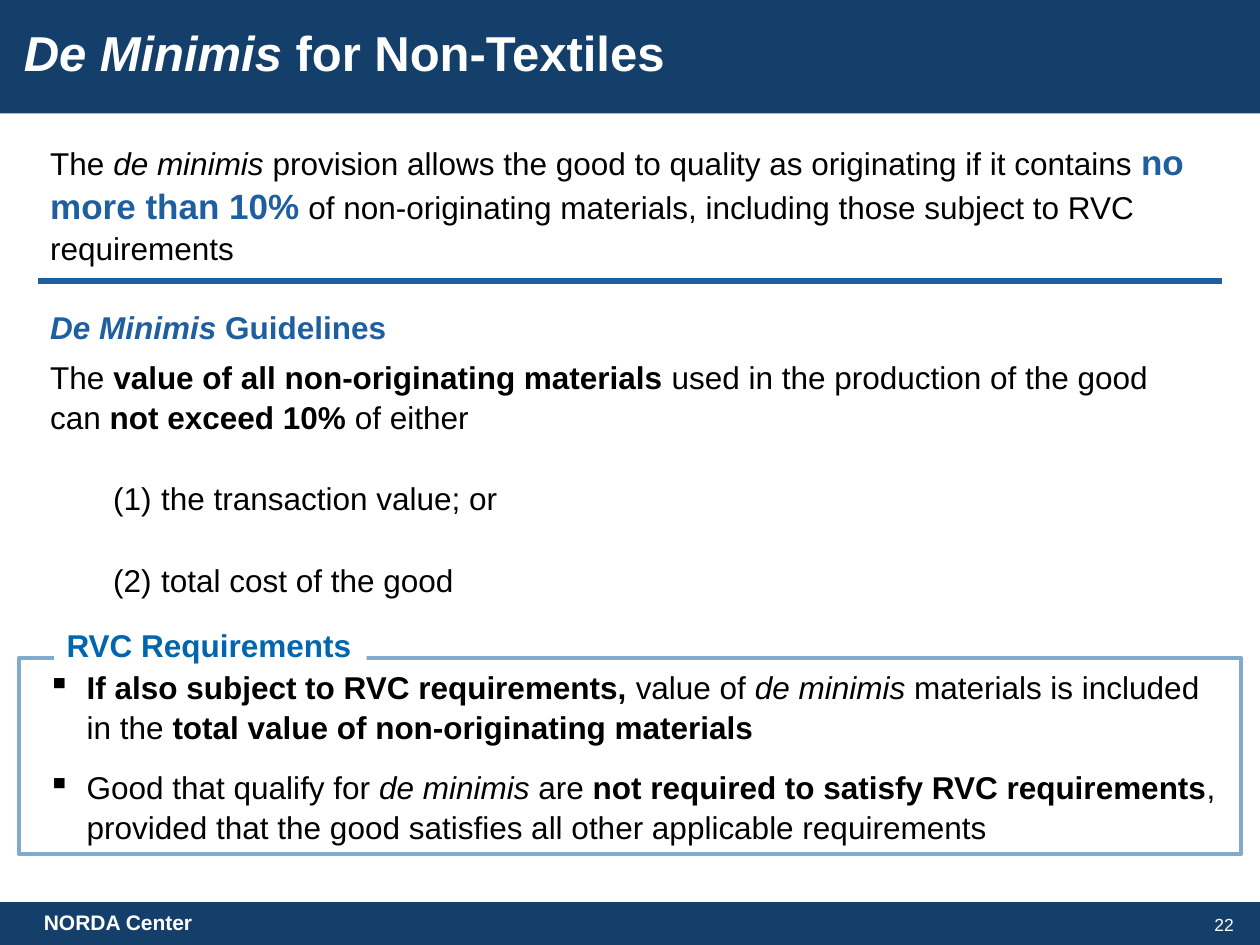
from lxml import etree
from pptx import Presentation
from pptx.dml.color import RGBColor
from pptx.enum import shapes, text
from pptx.oxml.ns import qn
from pptx.util import Inches, Pt

NAVY = RGBColor(0x14, 0x3F, 0x6A)
BLUE = RGBColor(0x1F, 0x5F, 0xA0)
LABEL_BLUE = RGBColor(0x01, 0x66, 0xAF)
FRAME_BLUE = RGBColor(0x7F, 0xAB, 0xCE)
WHITE = RGBColor(0xFF, 0xFF, 0xFF)
BLACK = RGBColor(0, 0, 0)

BOLD = {"bold": True}
ITALIC = {"italic": True}
BOLD_ITALIC = {"bold": True, "italic": True}
KEY = {"bold": True, "size": Pt(20), "color": BLUE}

# Each paragraph is (runs, paragraph format); each run is (words, font format).
TITLE = [([("De Minimis ", BOLD_ITALIC), ("for Non-Textiles", BOLD)], {"line_spacing": 0.9})]
INTRO = [([("The ", {}), ("de minimis ", ITALIC),
           ("provision allows the good to quality as originating if it contains ", {}),
           ("no more than 10%", KEY),
           (" of non-originating materials, including those subject to RVC requirements", {})],
          {"space_after": Pt(6)})]
NUMBERED = {"space_before": Pt(12), "space_after": Pt(12),
            "bullet": ("buAutoNum", {"type": "arabicParenBoth"}), "indent": (0.88, -0.38)}
GUIDELINES = [
    ([("De Minimis ", {**BOLD_ITALIC, "color": BLUE}), ("Guidelines", {**BOLD, "color": BLUE})],
     {"space_after": Pt(6)}),
    ([("The ", {}), ("value of all non-originating materials ", BOLD),
      ("used in the production of the good can ", {}), ("not exceed 10% ", BOLD),
      ("of either", {})], {"space_after": Pt(12)}),
    ([("the transaction value; or", {})], NUMBERED),
    ([("total cost of the good", {})], NUMBERED),
]
SQUARE = {"space_after": Pt(12), "bullet": ("buChar", {"char": "▪"}), "indent": (0.44, -0.31)}
RVC_RULES = [
    ([("If also subject to RVC requirements, ", BOLD), ("value of ", {}),
      ("de minimis ", ITALIC), ("materials is included in the ", {}),
      ("total value of non-originating materials", BOLD)], SQUARE),
    ([("Good that qualify for ", {}), ("de minimis ", ITALIC), ("are ", {}),
      ("not required to satisfy RVC requirements", BOLD),
      (", provided that the good satisfies all other applicable requirements", {})], SQUARE),
]
RVC_LABEL = [([("RVC Requirements", BOLD)], {"line_spacing": 1.0})]
FOOTER = [([("NORDA Center", BOLD)], {"line_spacing": 0.9, "indent": (0.25, 0)})]
PAGE_NUMBER = [([("22", {})], {"line_spacing": 1.0, "alignment": text.PP_ALIGN.RIGHT})]


def set_indent(para, left, first):
    properties = para._p.get_or_add_pPr()
    properties.set("marL", str(Inches(left)))
    properties.set("indent", str(Inches(first)))


def fill_text(box, paragraphs, size=18, color=BLACK, anchor=text.MSO_ANCHOR.TOP, wrap=True):
    frame = box.text_frame
    frame.word_wrap = wrap
    frame.vertical_anchor = anchor
    for index, (runs, layout) in enumerate(paragraphs):
        para = frame.paragraphs[0] if index == 0 else frame.add_paragraph()
        settings = {"alignment": text.PP_ALIGN.LEFT, "line_spacing": 1.05, **layout}
        indent = settings.pop("indent", None)
        bullet = settings.pop("bullet", None)
        for name, value in settings.items():
            setattr(para, name, value)
        if indent:
            set_indent(para, *indent)
        if bullet:
            tag, attributes = bullet
            etree.SubElement(para._p.get_or_add_pPr(), qn("a:" + tag), attributes)
        for words, style in runs:
            span = para.add_run()
            span.text = words
            font = {"name": "Arial", "size": Pt(size), "color": color, **style}
            span.font.color.rgb = font.pop("color")
            for name, value in font.items():
                setattr(span.font, name, value)


def add_text(page, place, paragraphs, **style):
    box = page.shapes.add_textbox(*map(Inches, place))
    fill_text(box, paragraphs, **style)


def add_rectangle(page, place, fill=None, line=None):
    box = page.shapes.add_shape(shapes.MSO_SHAPE.RECTANGLE, *map(Inches, place))
    box.shadow.inherit = False
    for part, color in ((box.fill, fill), (box.line.fill, line)):
        if color is None:
            part.background()
        else:
            part.solid()
            part.fore_color.rgb = color
    return box


def add_rule(page, left, right, top):
    rule = page.shapes.add_connector(shapes.MSO_CONNECTOR.STRAIGHT,
                                     *map(Inches, (left, top, right, top)))
    rule.line.color.rgb = BLUE
    rule.line.width = Pt(3)
    etree.SubElement(rule._element.spPr, qn("a:effectLst"))


def main():
    deck = Presentation()
    deck.slide_width, deck.slide_height = Inches(10), Inches(7.5)
    page = deck.slides.add_slide(deck.slide_layouts[6])
    middle = text.MSO_ANCHOR.MIDDLE

    add_rectangle(page, (0, 7.16, 10, 0.34), fill=NAVY)
    add_rectangle(page, (0, 0, 10, 0.9), fill=NAVY)
    add_text(page, (7.88, 7.16, 2.01, 0.36), PAGE_NUMBER, size=10, color=WHITE, anchor=middle)
    add_text(page, (0.09, 0.18, 8.88, 0.51), TITLE, size=28, color=WHITE)
    add_text(page, (0.3, 1.05, 9.35, 1), INTRO)
    add_text(page, (0.3, 2.38, 9.35, 2.1), GUIDELINES)
    add_rule(page, 0.3, 9.7, 2.23)

    frame = add_rectangle(page, (0.15, 5.22, 9.7, 1.56), line=FRAME_BLUE)
    frame.line.width = Pt(2.25)
    fill_text(frame, RVC_RULES, anchor=middle)
    label = add_rectangle(page, (0.43, 4.92, 2.48, 0.4), fill=WHITE)
    fill_text(label, RVC_LABEL, color=LABEL_BLUE, wrap=False)

    add_text(page, (0, 7.16, 4, 0.34), FOOTER, size=12, color=WHITE, anchor=middle)
    deck.save("out.pptx")


if __name__ == "__main__":
    main()
